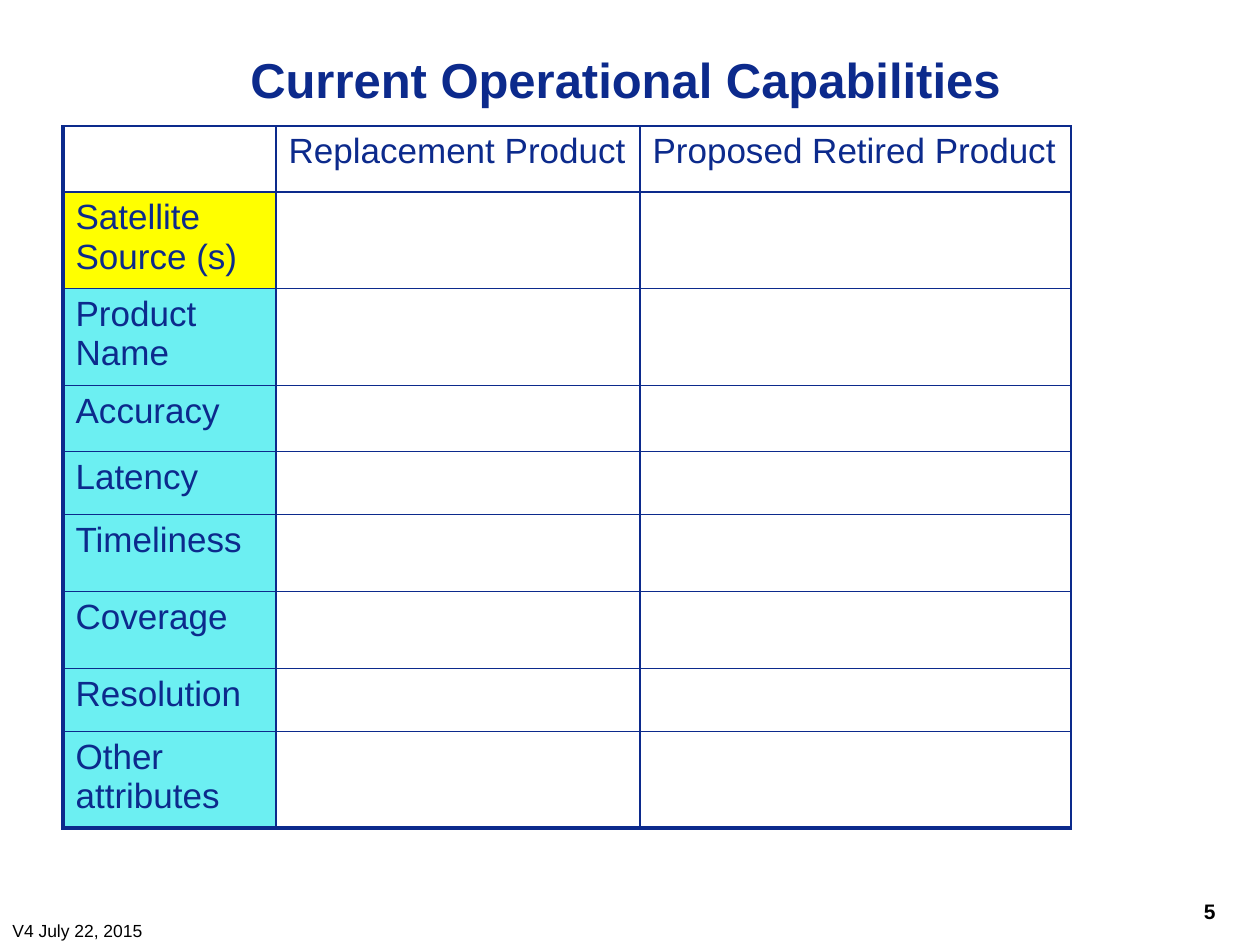
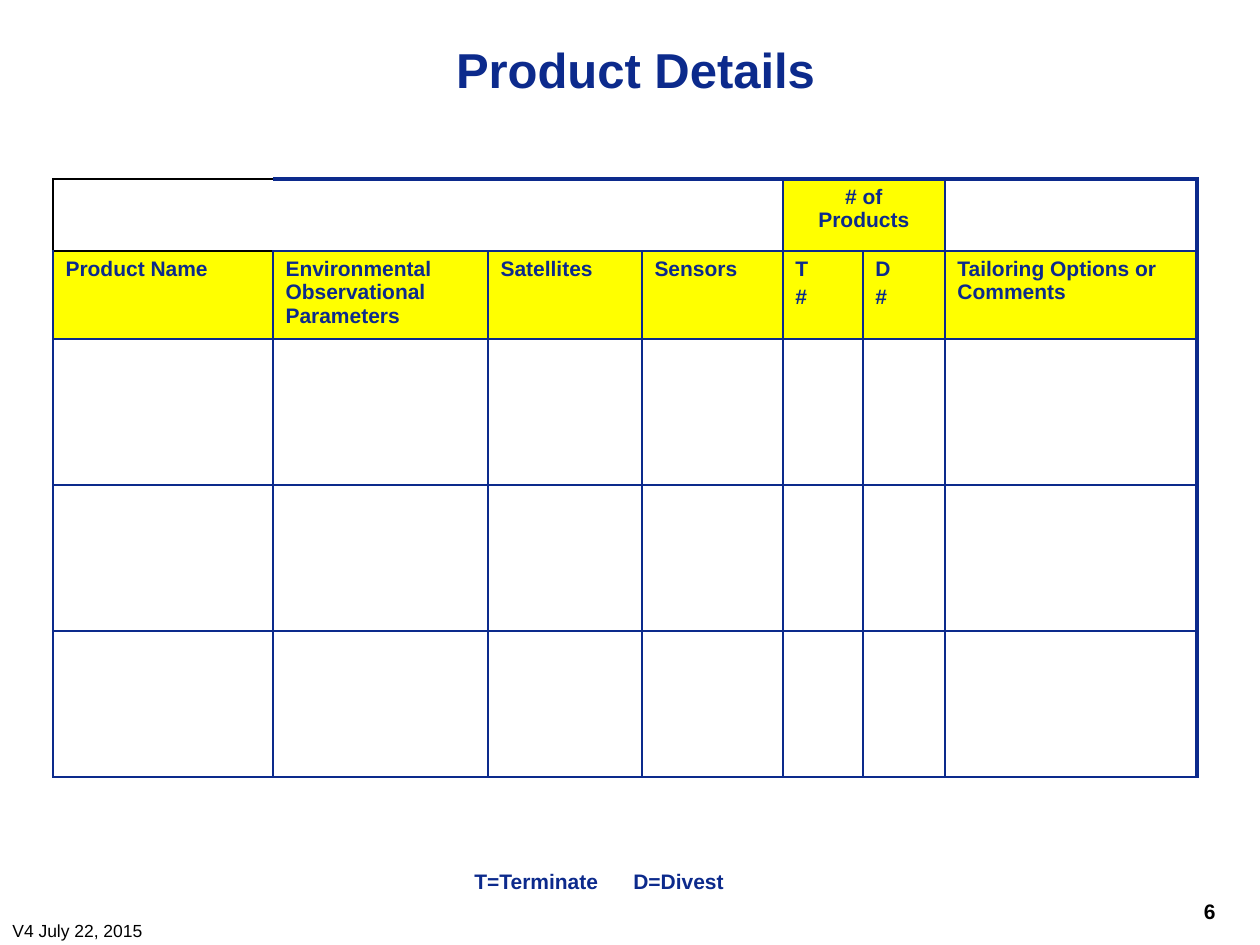
from lxml import etree
from pptx import Presentation
from pptx import util as u
from pptx.dml.color import RGBColor
from pptx.enum import text
from pptx.oxml.ns import qn

NAVY = RGBColor(0x0C, 0x2A, 0x8C)
BLACK = RGBColor(0, 0, 0)
YELLOW = RGBColor(0xFF, 0xFF, 0)
CYAN = RGBColor(0x6C, 0xEF, 0xF2)
FONT = "Arial"
PLAIN = "{2D5ABB26-0587-4C30-8999-92F81FD0307C}"
THIN, THICK = 1, 2.25
LEFT, CENTER, RIGHT = (text.PP_ALIGN.LEFT, text.PP_ALIGN.CENTER,
                       text.PP_ALIGN.RIGHT)


def px(n):
    """Turn pixels into EMU at 126 to the inch."""
    return u.Emu(round(n * 914400 / 126))


def node(parent, tag, **attrs):
    """Append a drawing element to its parent."""
    return etree.SubElement(parent, qn("a:" + tag), attrs)


def write(frame, lines, size, color=NAVY, bold=False, align=LEFT):
    """Fill a text frame with one paragraph for each line."""
    for i, line in enumerate(lines):
        para = frame.add_paragraph() if i else frame.paragraphs[0]
        para.alignment = align
        if i:
            para.space_before = u.Pt(size * 0.2)
        for j, part in enumerate(line.split("\n")):
            if j:
                para.add_line_break()
            run = para.add_run()
            run.text = part
            font = run.font
            font.name, font.size, font.bold = FONT, u.Pt(size), bold
            font.color.rgb = color


def label(slide, box, line, size, **style):
    """Add a wrapped text box with one line and return its paragraph."""
    frame = slide.shapes.add_textbox(*map(px, box)).text_frame
    frame.word_wrap = True
    write(frame, [line], size, **style)
    return frame.paragraphs[0]


def start(deck, title, box, number):
    """Add a slide with its title, page number and version."""
    slide = deck.slides.add_slide(deck.slide_layouts[5])
    head = slide.shapes.title
    head.left, head.top, head.width, head.height = map(px, box)
    frame = head.text_frame
    frame.word_wrap = True
    frame.auto_size = text.MSO_AUTO_SIZE.NONE
    frame.vertical_anchor = text.MSO_ANCHOR.MIDDLE
    write(frame, [title], 28, bold=True, align=CENTER)
    label(slide, (966, 892, 262, 53), str(number), 12,
          color=BLACK, bold=True, align=RIGHT)
    label(slide, (0, 914, 399, 32), "V4 July 22, 2015", 10, color=BLACK)
    return slide


def border(cell, side, color, width):
    """Draw one side of a cell, or clear it when the width is zero."""
    line = node(cell._tc.get_or_add_tcPr(), "ln" + side,
                w=str(u.Pt(width)))
    if width:
        node(node(line, "solidFill"), "srgbClr", val=str(color))
    else:
        node(line, "noFill")


def tint(cell, color):
    """Fill a cell at half strength, or leave it clear."""
    if color is None:
        cell.fill.background()
        return
    cell.fill.solid()
    cell.fill.fore_color.rgb = color
    node(cell._tc.tcPr.find(".//" + qn("a:srgbClr")), "alpha", val="50000")


def grid(slide, spot, cols, rows, edge, shade):
    """Add a table whose borders and fills follow the given rules."""
    box = (*spot, sum(cols), sum(rows))
    frame = slide.shapes.add_table(len(rows), len(cols), *map(px, box))
    table = frame.table
    table.first_row = table.horz_banding = False
    table._tbl.tblPr.find(qn("a:tableStyleId")).text = PLAIN
    for col, width in zip(table.columns, cols):
        col.width = px(width)
    for r, height in enumerate(rows):
        table.rows[r].height = px(height)
        for c in range(len(cols)):
            cell = table.cell(r, c)
            for side in "LRTB":
                border(cell, side, *edge(side, r, c))
            tint(cell, shade(r, c))
    return table


def compare(deck):
    """Build the slide that compares two products."""
    slide = start(deck, "Current Operational Capabilities",
                  (32, 21, 1187, 116), 5)
    heads = ["Replacement Product", "Proposed Retired Product"]
    names = ["Satellite Source (s)", "Product Name", "Accuracy", "Latency",
             "Timeliness", "Coverage", "Resolution", "Other attributes"]
    rows = [66, 91, 91, 66, 63, 77, 77, 63, 90]

    def edge(side, r, c):
        """Thicken the left and bottom edges."""
        outer = (side, c) == ("L", 0) or (side, r) == ("B", len(names))
        return NAVY, THICK if outer else THIN

    def shade(r, c):
        """Tint the names in the first column."""
        if c or not r:
            return None
        return YELLOW if r == 1 else CYAN

    table = grid(slide, (63, 126), [213, 364, 431], rows, edge, shade)
    for c, head in enumerate(heads, 1):
        write(table.cell(0, c).text_frame, [head], 20)
    for r, name in enumerate(names, 1):
        write(table.cell(r, 0).text_frame, [name], 20)


def detail(deck):
    """Build the slide that lists product details."""
    slide = start(deck, "Product Details", (42, 21, 1187, 95), 6)
    heads = [["Product Name"], ["Environmental Observational Parameters"],
             ["Satellites"], ["Sensors"], ["T", "#"], ["D", "#"],
             ["Tailoring Options or Comments"]]
    cols = [220, 215, 154, 141, 80, 82, 252]

    def edge(side, r, c):
        """Thicken the top and right edges and open the blank corner."""
        if (r, c) == (0, 0) and side != "R" or (side, r, c) == ("T", 1, 0):
            return BLACK, THIN
        if r == 0 and (side == "R" and c < 3 or side == "L" and c < 4):
            return NAVY, 0
        outer = (side, r) == ("T", 0) or (side, c) == ("R", 6)
        return NAVY, THICK if outer else THIN

    def shade(r, c):
        """Tint the headings."""
        return YELLOW if r == 1 or r == 0 and c in (4, 5) else None

    table = grid(slide, (53, 179), cols, [72, 88] + [146] * 3, edge, shade)
    count = table.cell(0, 4)
    count.merge(table.cell(0, 5))
    write(count.text_frame, ["# of\nProducts"], 12, bold=True, align=CENTER)
    for c, head in enumerate(heads):
        write(table.cell(1, c).text_frame, head, 12, bold=True)
    key = label(slide, (462, 862, 441, 38), "T=Terminate\tD=Divest", 12,
                bold=True)
    tabs = node(key._p.get_or_add_pPr(), "tabLst")
    node(tabs, "tab", pos=str(px(159)), algn="l")


def main():
    """Build and save the deck."""
    deck = Presentation()
    deck.slide_width, deck.slide_height = px(1260), px(945)
    compare(deck)
    detail(deck)
    deck.save("out.pptx")


if __name__ == "__main__":
    main()
